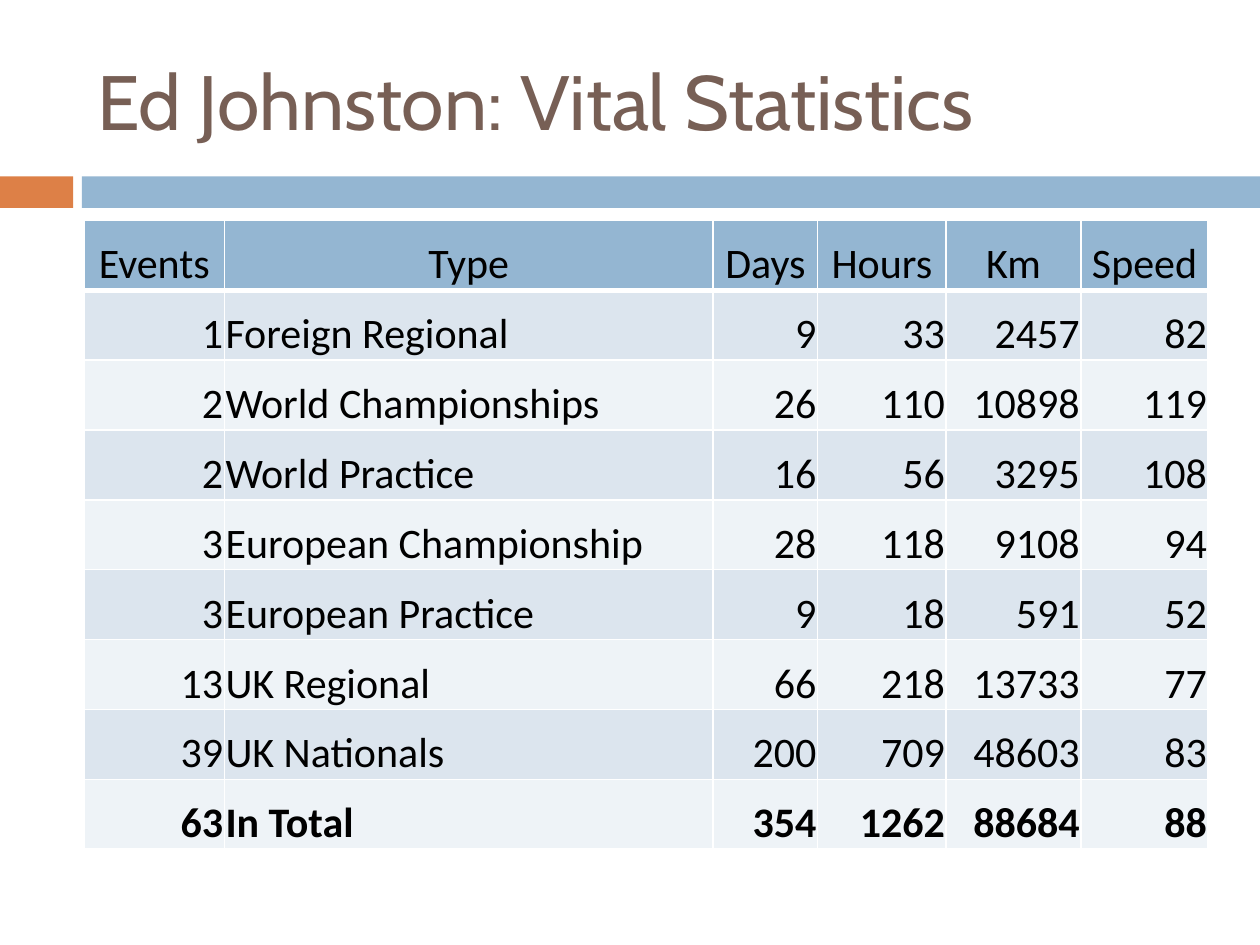
"""Build a slide with a title, a two-colour band and a table of flying statistics."""
from lxml import etree
from pptx import Presentation
from pptx import util as u
from pptx.dml.color import RGBColor
from pptx.enum import shapes, text
from pptx.oxml import ns

TITLE = "Ed Johnston: Vital Statistics"
HEADINGS = ("Events", "Type", "Days", "Hours", "Km", "Speed")
RECORDS = [
    (1, "Foreign Regional", 9, 33, 2457, 82),
    (2, "World Championships", 26, 110, 10898, 119),
    (2, "World Practice", 16, 56, 3295, 108),
    (3, "European Championship", 28, 118, 9108, 94),
    (3, "European Practice", 9, 18, 591, 52),
    (13, "UK Regional", 66, 218, 13733, 77),
    (39, "UK Nationals", 200, 709, 48603, 83),
    (63, "In Total", 354, 1262, 88684, 88),
]
COLUMN_WIDTHS = (79.92, 279.36, 59.76, 73.44, 77.04, 72.72)
ROW_HEIGHT = 39.92

ORANGE = RGBColor(0xDD, 0x80, 0x47)
BLUE = RGBColor(0x94, 0xB6, 0xD2)
BROWN = RGBColor(0x77, 0x5F, 0x55)
BLACK = RGBColor(0x00, 0x00, 0x00)
WHITE = RGBColor(0xFF, 0xFF, 0xFF)
STRIPES = (RGBColor(0xEE, 0xF3, 0xF7), RGBColor(0xDC, 0xE5, 0xEE))

BAND = [(0, 41.76, ORANGE), (46.8, 673.2, BLUE)]
LEFT, WIDTH = 48.24, 642.24
CELL_FORMAT = {
    "margin_left": u.Pt(0.72),
    "margin_right": u.Pt(0.72),
    "margin_top": u.Pt(0.72),
    "margin_bottom": 0,
    "vertical_anchor": text.MSO_ANCHOR.BOTTOM,
}


def apply(target, values):
    for name, value in values.items():
        setattr(target, name, value)


def style_font(font, face, size, color, bold=False):
    apply(font, {"name": face, "size": u.Pt(size), "bold": bold})
    font.color.rgb = color


def add_borders(cell, widths):
    properties = cell._tc.get_or_add_tcPr()
    for side, width in widths.items():
        line = etree.SubElement(properties, ns.qn(f"a:ln{side}"), w=str(u.Pt(width)))
        fill = etree.SubElement(line, ns.qn("a:solidFill"))
        etree.SubElement(fill, ns.qn("a:srgbClr"), val=str(WHITE))


def add_title(slide):
    title = slide.shapes.title
    apply(title, {"left": u.Pt(LEFT), "top": u.Pt(18),
                  "width": u.Pt(WIDTH), "height": u.Pt(77.76)})
    frame = title.text_frame
    frame.text = TITLE
    apply(frame, {"vertical_anchor": text.MSO_ANCHOR.MIDDLE, "word_wrap": True,
                  "auto_size": text.MSO_AUTO_SIZE.NONE})
    heading = frame.paragraphs[0]
    heading.alignment = text.PP_ALIGN.LEFT
    style_font(heading.runs[0].font, "Cabin", 44, BROWN)


def add_band(slide):
    for left, width, color in BAND:
        bar = slide.shapes.add_shape(shapes.MSO_SHAPE.RECTANGLE, u.Pt(left),
                                     u.Pt(100.8), u.Pt(width), u.Pt(18))
        bar.shadow.inherit = False
        bar.fill.solid()
        bar.fill.fore_color.rgb = color
        bar.line.fill.background()


def add_statistics(slide):
    rows = [HEADINGS, *RECORDS]
    last = len(rows) - 1
    statistics = slide.shapes.add_table(
        len(rows), len(HEADINGS), u.Pt(LEFT), u.Pt(126),
        u.Pt(WIDTH), u.Pt(ROW_HEIGHT * len(rows))).table
    for column, width in zip(statistics.columns, COLUMN_WIDTHS):
        column.width = u.Pt(width)
    for r, values in enumerate(rows):
        statistics.rows[r].height = u.Pt(ROW_HEIGHT)
        for c, value in enumerate(values):
            cell = statistics.cell(r, c)
            apply(cell, CELL_FORMAT)
            add_borders(cell, {"L": 1, "R": 1, "T": 3 if r == 1 else 1,
                               "B": 3 if r == 0 else 1})
            cell.fill.solid()
            cell.fill.fore_color.rgb = STRIPES[r % 2] if r else BLUE
            cell.text = str(value)
            entry = cell.text_frame.paragraphs[0]
            if r == 0:
                entry.alignment = text.PP_ALIGN.CENTER
            elif HEADINGS[c] == "Type":
                entry.alignment = text.PP_ALIGN.LEFT
            else:
                entry.alignment = text.PP_ALIGN.RIGHT
            style_font(entry.runs[0].font, "Calibri", 24, BLACK, r == last)


def main():
    deck = Presentation()
    apply(deck, {"slide_width": u.Pt(720), "slide_height": u.Pt(540)})
    slide = deck.slides.add_slide(deck.slide_layouts[5])
    add_band(slide)
    add_title(slide)
    add_statistics(slide)
    deck.save("out.pptx")


if __name__ == "__main__":
    main()
